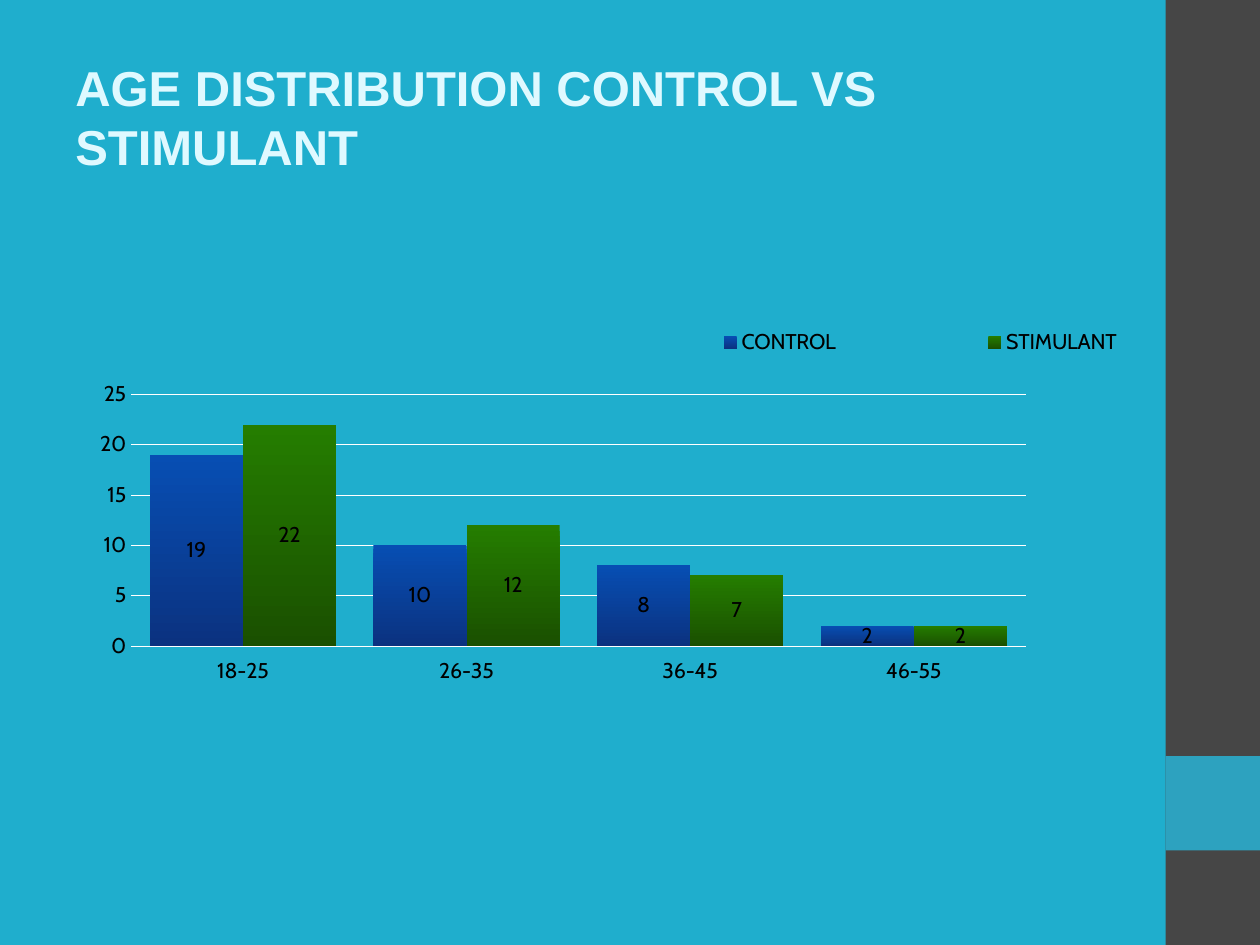
"""Build the age distribution slide: a title, a side band and a clustered column chart."""
import pptx
import pptx.chart.data
import pptx.dml.color
import pptx.enum.chart
import pptx.enum.shapes
import pptx.enum.text
import pptx.oxml
import pptx.util
from pptx.oxml.ns import nsdecls


def rgb(value):
    return pptx.dml.color.RGBColor.from_string(value)


def place(element, x, y, w, h, target=""):
    """Add a manual layout, in shares of the chart, to a legend or plot area."""
    for old in element.findall(pptx.oxml.ns.qn("c:layout")):
        element.remove(old)
    layout = pptx.oxml.parse_xml(
        f'<c:layout {nsdecls("c")}><c:manualLayout>{target}'
        '<c:xMode val="edge"/><c:yMode val="edge"/>'
        f'<c:x val="{x}"/><c:y val="{y}"/><c:w val="{w}"/><c:h val="{h}"/>'
        '</c:manualLayout></c:layout>')
    element.insert(0 if target else 1, layout)


deck = pptx.Presentation()
deck.slide_width = pptx.util.Inches(10)
deck.slide_height = pptx.util.Inches(7.5)
W, H = deck.slide_width, deck.slide_height
slide = deck.slides.add_slide(deck.slide_layouts[6])
slide.background.fill.solid()
slide.background.fill.fore_color.rgb = rgb("1FAECD")

for top, height, color in [(0, 1, "464646"), (0.8, 0.1, "2DA2BF")]:
    band = slide.shapes.add_shape(
        pptx.enum.shapes.MSO_SHAPE.RECTANGLE,
        int(W * 0.925), int(H * top), int(W * 0.075), int(H * height))
    band.shadow.inherit = False
    band.fill.solid()
    band.fill.fore_color.rgb = rgb(color)
    band.line.fill.background()

title = slide.shapes.add_textbox(
    int(W * 0.05), int(H * 0.04), int(W * 0.833), int(H / 6)).text_frame
title.word_wrap = True
title.vertical_anchor = pptx.enum.text.MSO_ANCHOR.MIDDLE
heading = title.paragraphs[0]
heading.text = "AGE DISTRIBUTION CONTROL VS STIMULANT"
heading.font.name = "Arial"
heading.font.size = pptx.util.Pt(28)
heading.font.bold = True
heading.font.color.rgb = rgb("DFF9FF")

ages = pptx.chart.data.CategoryChartData(number_format="0")
ages.categories = ["18-25", "26-35", "36-45", "46-55"]
ages.add_series("CONTROL", [19, 10, 8, 2])
ages.add_series("STIMULANT", [22, 12, 7, 2])
chart = slide.shapes.add_chart(
    pptx.enum.chart.XL_CHART_TYPE.COLUMN_CLUSTERED,
    pptx.util.Inches(0.31), pptx.util.Inches(2.56),
    pptx.util.Inches(10.44), pptx.util.Inches(3.17), ages).chart
chart.has_title = False
chart.font.name = "Cabin"
chart.font.size = pptx.util.Pt(12.2)
chart.font.color.rgb = rgb("000000")

chart.has_legend = True
chart.legend.position = pptx.enum.chart.XL_LEGEND_POSITION.TOP
chart.legend.include_in_layout = False
place(chart.legend._element, 0.41, 0, 0.52, 0.1)
place(chart._chartSpace.chart.plotArea, 0.07, 0.18, 0.68, 0.63,
      '<c:layoutTarget val="inner"/>')

groups, counts = chart.category_axis, chart.value_axis
for axis in (groups, counts):
    axis.major_tick_mark = pptx.enum.chart.XL_TICK_MARK.NONE
    axis.minor_tick_mark = pptx.enum.chart.XL_TICK_MARK.NONE
counts.minimum_scale, counts.maximum_scale, counts.major_unit = 0, 25, 5
counts.has_major_gridlines = True
counts.format.line.fill.background()
groups.tick_label_position = pptx.enum.chart.XL_TICK_LABEL_POSITION.LOW
for line in (groups.format.line, counts.major_gridlines.format.line):
    line.color.rgb = rgb("FFFFFF")
    line.width = pptx.util.Pt(0.47)

columns = chart.plots[0]
columns.vary_by_categories = False
columns.gap_width = 40
columns.overlap = 0
for group, shades in zip(columns.series, [("074EB3", "0B3280"), ("257D00", "1A5000")]):
    group.format.fill.gradient()
    group.format.fill.gradient_angle = 270
    for stop, position, shade in zip(group.format.fill.gradient_stops, (0, 1), shades):
        stop.position = position
        stop.color.rgb = rgb(shade)
    labels = group.data_labels
    labels.show_value = True
    labels.number_format = "0"
    labels.number_format_is_linked = False
    labels.position = pptx.enum.chart.XL_LABEL_POSITION.CENTER

deck.save("out.pptx")
